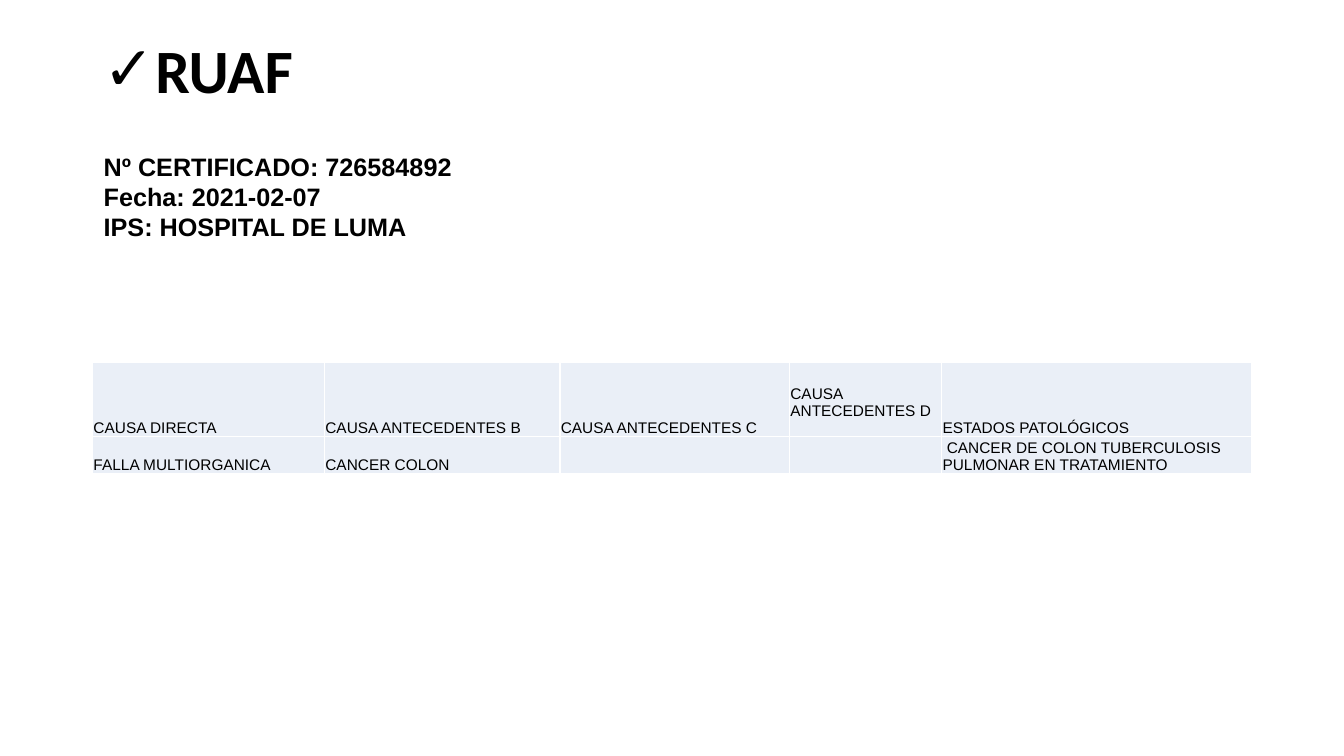
from dataclasses import dataclass

from lxml.etree import SubElement
from pptx import Presentation
from pptx.dml.color import RGBColor
from pptx.enum.text import MSO_ANCHOR
from pptx.oxml.ns import qn
from pptx.util import Pt


@dataclass(frozen=True)
class Theme:
    ink: str = "000000"
    cell: str = "EAEFF7"
    border: str = "FFFFFF"
    heading_font: str = "Calibri"
    body_font: str = "Arial"
    heading_size: int = 44
    detail_size: int = 18
    cell_size: int = 11


THEME = Theme()

CERTIFICATE = ["Nº CERTIFICADO: 726584892", "Fecha: 2021-02-07", "IPS: HOSPITAL DE LUMA"]
CAUSES = [
    ["CAUSA DIRECTA", "CAUSA ANTECEDENTES B", "CAUSA ANTECEDENTES C",
     "CAUSA ANTECEDENTES D", "ESTADOS PATOLÓGICOS"],
    ["FALLA MULTIORGANICA", "CANCER COLON", "", "",
     " CANCER DE COLON TUBERCULOSIS PULMONAR EN TRATAMIENTO"],
]
CAUSE_WIDTHS = [165.6, 168.2, 164, 108.7, 221.3]
CAUSE_HEIGHTS = [52.4, 26.6]
RAISED_CAUSE = "CAUSA ANTECEDENTES D"


def apply(target, formats):
    for name, value in formats.items():
        setattr(target, name, value)


def write(paragraph, text, font, size, bold=False):
    line = paragraph.add_run() if text else paragraph
    if text:
        line.text = text
    apply(line.font, {"name": font, "size": Pt(size), "bold": bold})
    line.font.color.rgb = RGBColor.from_string(THEME.ink)


def add_text_frame(slide, box, anchor):
    frame = slide.shapes.add_textbox(*map(Pt, box)).text_frame
    apply(frame, {"word_wrap": True, "vertical_anchor": anchor})
    return frame


# Heading with a tick as its bullet
def add_heading(slide, box, text):
    heading = add_text_frame(slide, box, MSO_ANCHOR.MIDDLE).paragraphs[0]
    heading.line_spacing = 0.9
    write(heading, text, THEME.heading_font, THEME.heading_size, bold=True)
    properties = heading._p.get_or_add_pPr()
    properties.set("marL", str(Pt(22.5)))
    properties.set("indent", str(-Pt(22.5)))
    SubElement(properties, qn("a:buFont"), typeface=THEME.body_font)
    SubElement(properties, qn("a:buChar"), char="✓")


# Certificate details, one paragraph each
def add_certificate(slide, box, details):
    frame = add_text_frame(slide, box, MSO_ANCHOR.TOP)
    for index, detail in enumerate(details):
        paragraph = frame.add_paragraph() if index else frame.paragraphs[0]
        write(paragraph, detail, THEME.body_font, THEME.detail_size, bold=True)


def add_borders(cell):
    properties = cell._tc.get_or_add_tcPr()
    for position, side in enumerate(("a:lnL", "a:lnR", "a:lnT", "a:lnB")):
        border = SubElement(properties, qn(side), w=str(Pt(1)))
        fill = SubElement(border, qn("a:solidFill"))
        SubElement(fill, qn("a:srgbClr"), val=THEME.border)
        properties.insert(position, border)


# Table of causes of death
def add_causes(slide, box, rows):
    table = slide.shapes.add_table(len(rows), len(rows[0]), *map(Pt, box)).table
    apply(table, {"first_row": False, "horz_banding": False})
    for column, width in zip(table.columns, CAUSE_WIDTHS):
        column.width = Pt(width)
    for row, height, causes in zip(table.rows, CAUSE_HEIGHTS, rows):
        row.height = Pt(height)
        for cell, cause in zip(row.cells, causes):
            apply(cell, {
                "margin_left": Pt(0.6), "margin_right": Pt(0.6), "margin_top": Pt(0.6),
                "margin_bottom": Pt(12 if cause == RAISED_CAUSE else 0),
                "vertical_anchor": MSO_ANCHOR.BOTTOM,
            })
            cell.fill.solid()
            cell.fill.fore_color.rgb = RGBColor.from_string(THEME.cell)
            add_borders(cell)
            write(cell.text_frame.paragraphs[0], cause, THEME.body_font, THEME.cell_size)


def build_certificate_slide(presentation):
    slide = presentation.slides.add_slide(presentation.slide_layouts[6])
    add_heading(slide, (67, 0, 828, 104.4), "RUAF")
    add_certificate(slide, (67, 104.4, 684, 72.7), CERTIFICATE)
    add_causes(slide, (66.2, 259.2, sum(CAUSE_WIDTHS), sum(CAUSE_HEIGHTS)), CAUSES)


def main():
    presentation = Presentation()
    apply(presentation, {"slide_width": Pt(960), "slide_height": Pt(540)})
    build_certificate_slide(presentation)
    presentation.save("out.pptx")


if __name__ == "__main__":
    main()
